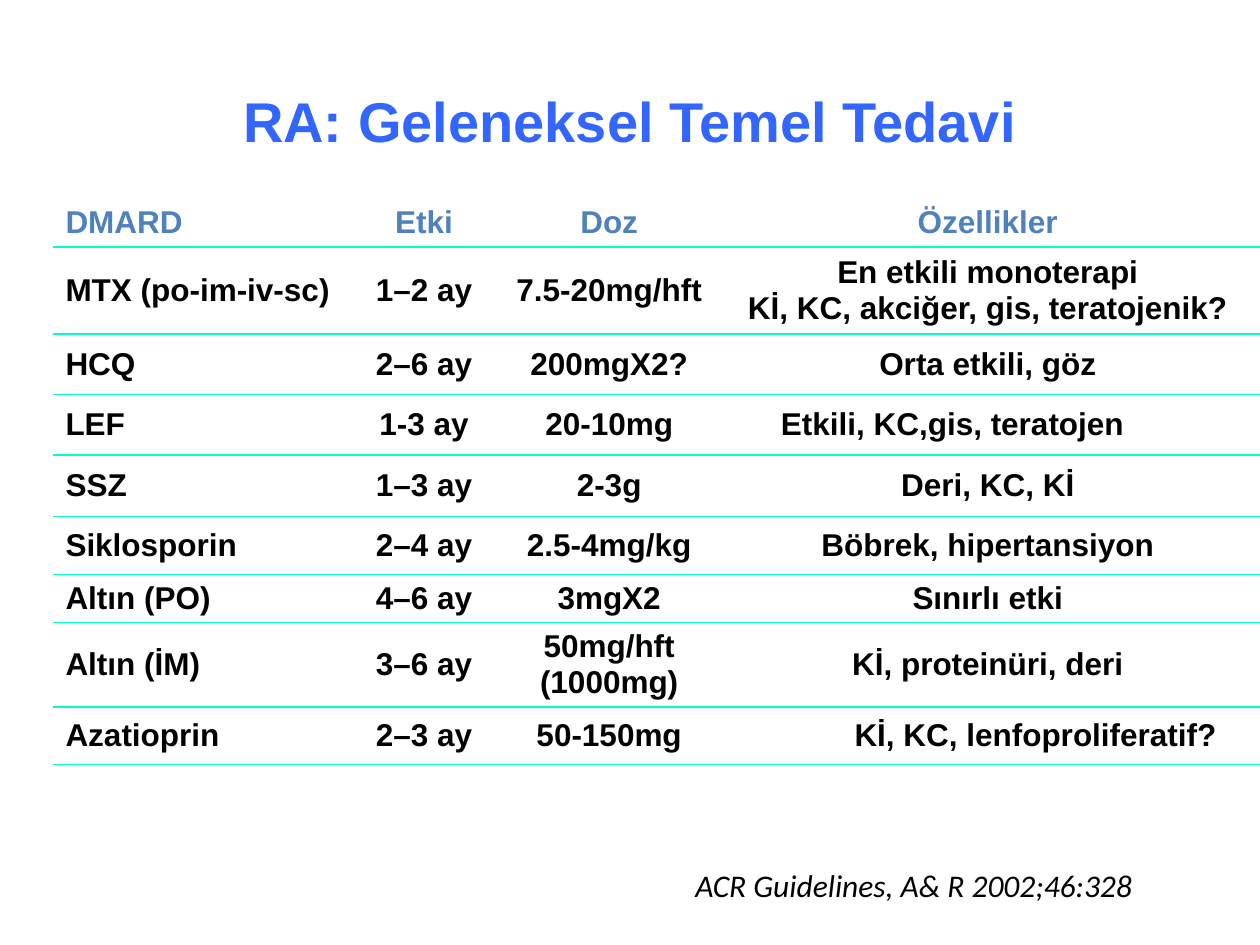
from dataclasses import dataclass
from lxml.etree import SubElement
from pptx import Presentation
from pptx.dml.color import RGBColor
from pptx.enum.text import MSO_ANCHOR, PP_ALIGN
from pptx.oxml.ns import qn
from pptx.util import Inches, Pt


@dataclass(frozen=True)
class Theme:
    title: str = "3366FF"
    head: str = "4F81BD"
    ink: str = "000000"
    rule: str = "00FFCC"
    big: int = 32
    body: int = 18
    sans: str = "Arial"
    note: str = "Calibri"


THEME = Theme()
WIDE, HIGH = 10, 7.5
PLAIN = "{2D5ABB26-0587-4C30-8999-92F81FD0307C}"
COLS = [2.32, 1.25, 1.69, 4.32]
ROWS = [0.38, 0.69, 0.48, 0.48, 0.49, 0.46, 0.38, 0.67, 0.46]
DRUGS = [
    ("DMARD", "Etki", "Doz", "Özellikler"),
    ("MTX (po-im-iv-sc)", "1–2 ay", "7.5-20mg/hft",
     "En etkili monoterapi\vKİ, KC, akciğer, gis, teratojenik?"),
    ("HCQ", "2–6 ay", "200mgX2?", "Orta etkili, göz"),
    ("LEF", "1-3 ay", "20-10mg", "Etkili, KC,gis, teratojen"),
    ("SSZ", "1–3 ay", "2-3g", "Deri, KC, Kİ"),
    ("Siklosporin", "2–4 ay", "2.5-4mg/kg", "Böbrek, hipertansiyon"),
    ("Altın (PO)", "4–6 ay", "3mgX2", "Sınırlı etki"),
    ("Altın (İM)", "3–6 ay", "50mg/hft (1000mg)", "Kİ, proteinüri, deri"),
    ("Azatioprin", "2–3 ay", "50-150mg", "Kİ, KC, lenfoproliferatif?"),
]


def share(left, top, width, height):
    return [Inches(part * side) for part, side in
            zip((left, top, width, height), (WIDE, HIGH, WIDE, HIGH))]


def style(para, face, size, color, bold=False, italic=False):
    font = para.font
    font.name, font.size = face, Pt(size)
    font.bold, font.italic = bold, italic
    font.color.rgb = RGBColor.from_string(color)


def border(cell, sides):
    props = cell._tc.get_or_add_tcPr()
    for spot, side in enumerate(sides):
        line = props.makeelement(qn(f"a:{side}"), {"w": str(Pt(1))})
        fill = SubElement(line, qn("a:solidFill"))
        SubElement(fill, qn("a:srgbClr"), val=THEME.rule)
        props.insert(spot, line)


def add_title(slide, box):
    title = slide.shapes.title
    title.left, title.top, title.width, title.height = box
    frame = title.text_frame
    frame.text = "RA: Geleneksel Temel Tedavi"
    frame.vertical_anchor = MSO_ANCHOR.MIDDLE
    para = frame.paragraphs[0]
    para.alignment = PP_ALIGN.CENTER
    style(para, THEME.sans, THEME.big, THEME.title, bold=True)


def fill_cell(cell, text, row, col):
    cell.text = text
    cell.fill.background()
    cell.vertical_anchor = MSO_ANCHOR.MIDDLE if row else MSO_ANCHOR.BOTTOM
    para = cell.text_frame.paragraphs[0]
    para.alignment = PP_ALIGN.CENTER if col else PP_ALIGN.LEFT
    style(para, THEME.sans, THEME.body, THEME.ink if row else THEME.head, bold=True)
    border(cell, ("lnT", "lnB") if row else ("lnB",))


def add_drugs(slide, box):
    left, top, width, height = box
    table = slide.shapes.add_table(len(ROWS), len(COLS), *box).table
    table.first_row = table.horz_banding = False
    table._tbl.tblPr.find(qn("a:tableStyleId")).text = PLAIN
    for col, part in zip(table.columns, COLS):
        col.width = int(width * part / sum(COLS))
    for row, part in zip(table.rows, ROWS):
        row.height = int(height * part / sum(ROWS))
    for row, texts in enumerate(DRUGS):
        for col, text in enumerate(texts):
            fill_cell(table.cell(row, col), text, row, col)
    table.cell(3, 3).margin_right = Inches(0.66)
    table.cell(8, 3).margin_left = Inches(0.86)


def add_source(slide, box):
    frame = slide.shapes.add_textbox(*box).text_frame
    frame.word_wrap = True
    frame.text = "ACR Guidelines, A& R 2002;46:328"
    style(frame.paragraphs[0], THEME.note, THEME.body, THEME.ink, italic=True)


def main():
    deck = Presentation()
    deck.slide_width, deck.slide_height = Inches(WIDE), Inches(HIGH)
    slide = deck.slides.add_slide(deck.slide_layouts[5])
    add_title(slide, share(0.075, 0.33 / HIGH, 0.85, 1.25 / HIGH))
    add_drugs(slide, share(0.042, 1.58 / HIGH, 0.958, sum(ROWS) / HIGH))
    add_source(slide, share(0.542, 0.91, 0.392, 0.4 / HIGH))
    deck.save("out.pptx")


if __name__ == "__main__":
    main()
